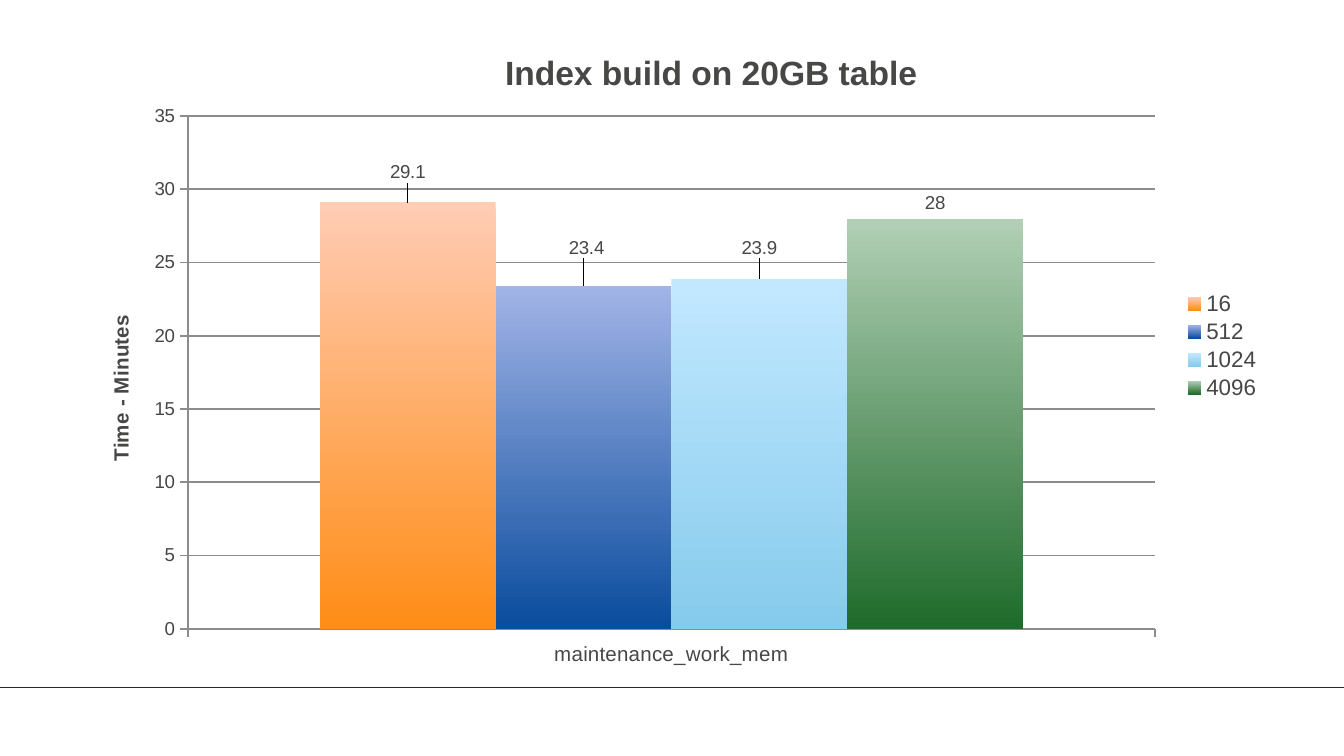
from dataclasses import dataclass

from lxml.etree import SubElement
from pptx import Presentation
from pptx.chart.data import CategoryChartData
from pptx.dml.color import RGBColor
from pptx.enum.chart import XL_CHART_TYPE as ChartType
from pptx.enum.chart import XL_LABEL_POSITION as LabelPosition
from pptx.enum.chart import XL_LEGEND_POSITION as LegendPosition
from pptx.enum.chart import XL_TICK_MARK as TickMark
from pptx.enum.shapes import MSO_CONNECTOR as Connector
from pptx.oxml import parse_xml
from pptx.oxml.ns import nsdecls, qn
from pptx.util import Emu, Pt

PX = 914400 / 134.4


@dataclass(frozen=True)
class Theme:
    """Colours and type sizes of the deck."""
    font: str = "Arial"
    text: str = "474746"
    grid: str = "8C8C8C"
    rule: str = "272727"
    title: int = 18
    legend: int = 12
    axis: int = 11
    label: int = 10


@dataclass(frozen=True)
class Box:
    """A rectangle in px."""
    left: int
    top: int
    width: int
    height: int

    def emu(self):
        """Return the four lengths in EMU."""
        return [px(n) for n in (self.left, self.top, self.width, self.height)]


@dataclass(frozen=True)
class Setting:
    """One memory setting: its time, bar gradient and label shift in px."""
    name: str
    minutes: float
    light: str
    dark: str
    shift: tuple


THEME = Theme()
SETTINGS = [
    Setting("16", 29.1, "FFCCB4", "FF8D17", (0, -14)),
    Setting("512", 23.4, "A2B4E7", "0A4C9D", (3, -22)),
    Setting("1024", 23.9, "C2E8FF", "86CBEC", (0, -15)),
    Setting("4096", 28, "B1CFB5", "1F6B2B", (0, 0)),
]


def px(length):
    """Turn px into EMU."""
    return Emu(round(length * PX))


def style_font(font, size, bold=False):
    """Apply the theme typeface and text colour."""
    font.name = THEME.font
    font.size = Pt(size)
    font.bold = bold
    font.color.rgb = RGBColor.from_string(THEME.text)


def style_line(line, color, width):
    """Give a line its colour and width in points."""
    line.color.rgb = RGBColor.from_string(color)
    line.width = Pt(width)


def set_layout(element, index, box, values, inner=False, edge=True):
    """Place a chart part by px values relative to the chart box."""
    for old in element.findall(qn("c:layout")):
        element.remove(old)
    layout = parse_xml(f"<c:layout {nsdecls('c')}><c:manualLayout/></c:layout>")
    manual = layout[0]
    if inner:
        SubElement(manual, qn("c:layoutTarget")).set("val", "inner")
    if edge:
        for mode in ("xMode", "yMode"):
            SubElement(manual, qn(f"c:{mode}")).set("val", "edge")
    sides = (box.width, box.height) * 2
    for tag, value, side in zip("xywh", values, sides):
        SubElement(manual, qn(f"c:{tag}")).set("val", f"{value / side:.4f}")
    element.insert(index, layout)


def add_title(owner, text, size, box, place):
    """Title a chart or an axis and place the title."""
    title = owner.chart_title if hasattr(owner, "chart_title") else owner.axis_title
    span = title.text_frame.paragraphs[0].add_run()
    span.text = text
    style_font(span.font, size, bold=True)
    set_layout(title._element, 1, box, place)


def style_axis(axis, size):
    """Style the line, ticks and labels of an axis."""
    axis.major_tick_mark = TickMark.OUTSIDE
    axis.minor_tick_mark = TickMark.NONE
    style_line(axis.format.line, THEME.grid, 1)
    style_font(axis.tick_labels.font, size)


def style_bar(series, setting, box):
    """Fill a bar with its gradient and place its value label."""
    fill = series.format.fill
    fill.gradient()
    fill.gradient_angle = 270
    for stop, color in zip(fill.gradient_stops, (setting.light, setting.dark)):
        stop.color.rgb = RGBColor.from_string(color)
    series.format.line.fill.background()
    series.invert_if_negative = False
    labels = series.data_labels
    labels.show_value = True
    labels.position = LabelPosition.OUTSIDE_END
    style_font(labels.font, THEME.label)
    if any(setting.shift):
        label = series.points[0].data_label
        label.position = LabelPosition.OUTSIDE_END
        style_font(label.font, THEME.label)
        element = labels._element.find(qn("c:dLbl"))
        set_layout(element, 1, box, setting.shift, edge=False)


def add_build_chart(page, box):
    """Draw the index build times as clustered columns."""
    data = CategoryChartData(number_format="General")
    data.categories = ["maintenance_work_mem"]
    for setting in SETTINGS:
        data.add_series(setting.name, [setting.minutes])
    frame = page.shapes.add_chart(ChartType.COLUMN_CLUSTERED, *box.emu(), data)
    chart = frame.chart
    style_font(chart.font, THEME.label)
    add_title(chart, "Index build on 20GB table", THEME.title, box, (429, 32))

    plot = chart.plots[0]
    plot.gap_width = 150
    plot.overlap = 0
    plot.vary_by_categories = False
    for series, setting in zip(plot.series, SETTINGS):
        style_bar(series, setting, box)
    area = chart._chartSpace.chart.plotArea
    set_layout(area, 0, box, (118, 103, 967, 513), inner=True)

    style_axis(chart.category_axis, THEME.axis)
    times = chart.value_axis
    style_axis(times, THEME.label)
    times.minimum_scale = 0
    times.maximum_scale = 35
    times.major_unit = 5
    style_line(times.major_gridlines.format.line, THEME.grid, 1)
    add_title(times, "Time - Minutes", THEME.axis, box, (33, 298))

    chart.has_legend = True
    legend = chart.legend
    legend.position = LegendPosition.RIGHT
    legend.include_in_layout = False
    style_font(legend.font, THEME.legend)
    set_layout(legend._element, 1, box, (1110, 275, 84, 116))


def add_footer_rule(page, box):
    """Draw the thin rule across the foot of the page."""
    left, top, width, height = box.emu()
    rule = page.shapes.add_connector(
        Connector.STRAIGHT, left, top, left + width, top + height)
    style_line(rule.line, THEME.rule, 0.25)
    SubElement(rule._element.spPr, qn("a:effectLst"))


def main():
    """Build and save the deck."""
    deck = Presentation()
    deck.slide_width = px(1344)
    deck.slide_height = px(756)
    page = deck.slides.add_slide(deck.slide_layouts[6])
    add_footer_rule(page, Box(0, 687, 1344, 0))
    add_build_chart(page, Box(70, 13, 1203, 665))
    deck.save("out.pptx")


if __name__ == "__main__":
    main()
